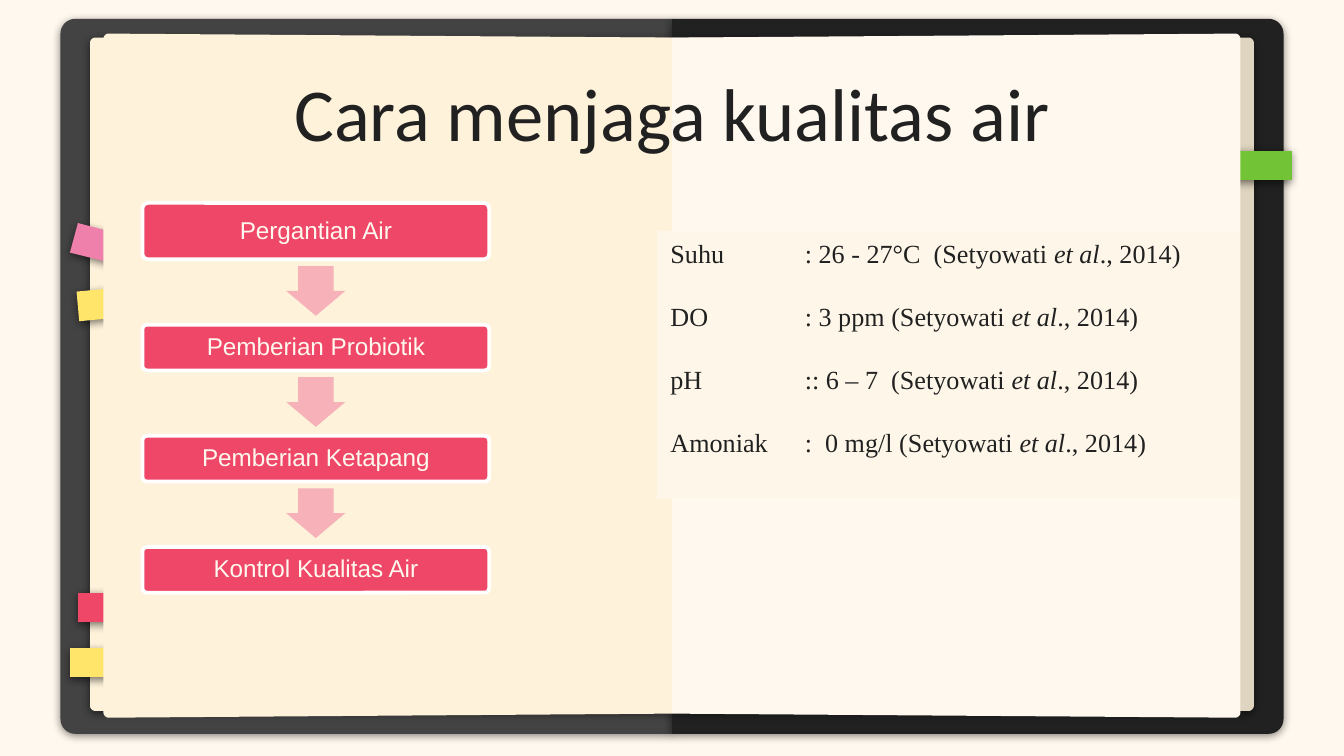
from math import cos, sin, pi
from lxml.etree import SubElement
from pptx import Presentation
from pptx.dml.color import RGBColor
from pptx.enum.shapes import MSO_SHAPE
from pptx.enum.text import MSO_ANCHOR, PP_ALIGN
from pptx.oxml.ns import qn
from pptx.util import Inches, Pt

WIDE = 10
HIGH = WIDE * 9 / 16
MID = WIDE / 2
HEX = {
    "cream": "FFF8EE", "sand": "FEF2DA", "edge": "DED4BF", "panel": "FEF7E9",
    "grey": "434343", "dark": "212121", "white": "FFFFFF", "red": "EF4768",
    "rose": "F6B1B9", "pink": "EF7FAB", "gold": "FFE56A", "green": "72C436",
}
COVER = dict(x=0.45, top=0.14, low=5.46, slant=0, r=0.11)
BLOCK = dict(x=0.67, top=0.28, low=5.29, slant=0, r=0.04)
SHEET = dict(x=0.77, top=0.25, low=5.34, slant=0.03, r=0.04)
STEPS = ["Pergantian Air", "Pemberian Probiotik", "Pemberian Ketapang", "Kontrol Kualitas Air"]
FACTS = [
    ("Suhu \t: 26 - 27°C  (Setyowati ", "., 2014)"),
    ("DO\t: 3 ppm (Setyowati ", "., 2014)"),
    ("pH\t:: 6 – 7  (Setyowati ", "., 2014)"),
    ("Amoniak\t:  0 mg/l (Setyowati ", "., 2014)"),
]
HEAD = dict(name="Calibri", size=Pt(40), bold=False)
STEP = dict(name="Arial", size=Pt(13))
FACT = dict(name="Times New Roman", size=Pt(14))


def color(key):
    return RGBColor.from_string(HEX[key])


def style(font, looks, key):
    for name, value in looks.items():
        setattr(font, name, value)
    font.color.rgb = color(key)


def frame(shape, anchor, pad):
    text = shape.text_frame
    looks = dict(word_wrap=True, vertical_anchor=anchor, margin_left=pad[0],
                 margin_right=pad[0], margin_top=pad[1], margin_bottom=pad[1])
    for name, value in looks.items():
        setattr(text, name, value)
    return text


def paint(shape, fill, line=None):
    shape.shadow.inherit = False
    shape.fill.solid()
    shape.fill.fore_color.rgb = color(fill)
    if line:
        shape.line.color.rgb = color(line)
        shape.line.width = Pt(2)
    else:
        shape.line.fill.background()


def shade(shape):
    props = shape.element.spPr
    glow = SubElement(props.find(qn("a:effectLst")), qn("a:outerShdw"),
                      blurRad=str(Pt(4.5)), dist=str(Pt(1.5)), dir="5400000",
                      algn="bl", rotWithShape="0")
    tint = SubElement(glow, qn("a:srgbClr"), val="000000")
    SubElement(tint, qn("a:alpha"), val="50000")


def outline(slide, points, fill, cast=True):
    spots = [(Inches(x), Inches(y)) for x, y in points]
    pen = slide.shapes.build_freeform(*spots[0], scale=1.0)
    pen.add_line_segments(spots[1:], close=True)
    shape = pen.convert_to_shape()
    paint(shape, fill)
    if cast:
        shade(shape)


def half(slide, fill, x, top, low, slant, r, right=False, cast=True):
    turns = [pi / 2 * i / 8 for i in range(9)]
    upper = [(x + r - r * sin(t), top + r - r * cos(t)) for t in turns]
    lower = [(px, top + low - py) for px, py in reversed(upper)]
    points = [(MID, top + slant), *upper, *lower, (MID, low - slant)]
    if right:
        points = [(WIDE - px, py) for px, py in points]
    outline(slide, points, fill, cast)


def tab(slide, x, y, fill):
    w, h = 0.74, 0.22
    outline(slide, [(x, y), (x, y + h), (x + w, y + h), (x + w, y)], fill)


def book(slide):
    half(slide, "grey", **COVER)
    half(slide, "sand", **BLOCK)
    half(slide, "dark", **COVER, right=True)
    outline(slide, [(1.31, 2.1), (0.57, 2.17), (0.59, 2.39), (1.33, 2.32)], "gold")
    half(slide, "edge", **BLOCK, right=True)
    outline(slide, [(0.58, 1.66), (0.52, 1.88), (1.24, 2.06), (1.3, 1.85)], "pink")
    for x, y, fill in [(0.58, 4.41, "red"), (0.52, 4.82, "gold"), (8.87, 1.12, "green")]:
        tab(slide, x, y, fill)
    half(slide, "sand", **SHEET, cast=False)
    half(slide, "cream", **SHEET, right=True, cast=False)


def place(slide, kind, x, y, w, h):
    return slide.shapes.add_shape(kind, Inches(x), Inches(y), Inches(w), Inches(h))


def title(slide, words):
    shape = slide.shapes.title
    shape.element.getparent().append(shape.element)
    spot = dict(left=0.78, top=0.4, width=8.44, height=0.78)
    for name, value in spot.items():
        setattr(shape, name, Inches(value))
    text = frame(shape, MSO_ANCHOR.TOP, (Inches(0.1), Inches(0.1)))
    text.text = words
    para = text.paragraphs[0]
    para.alignment = PP_ALIGN.CENTER
    style(para.font, HEAD, "dark")


def flow(slide, left, base, last):
    width = 2.58
    pitch = (last - base) / (len(STEPS) - 1)
    for i, words in enumerate(STEPS):
        high = 0.34 if i else 0.42
        low = base + i * pitch
        box = place(slide, MSO_SHAPE.ROUNDED_RECTANGLE, left, low - high, width, high)
        box.adjustments[0] = 0.1
        paint(box, "red", "white")
        text = frame(box, MSO_ANCHOR.MIDDLE, (Inches(0.05), Inches(0.05)))
        text.text = words
        para = text.paragraphs[0]
        para.alignment = PP_ALIGN.CENTER
        para.line_spacing = 0.9
        style(para.font, STEP, "cream")
        if i < len(STEPS) - 1:
            arrow = place(slide, MSO_SHAPE.DOWN_ARROW, left + width / 2 - 0.22, low + 0.05, 0.44, 0.37)
            arrow.adjustments[0], arrow.adjustments[1] = 0.6, 0.5
            paint(arrow, "rose")


def facts(slide):
    panel = place(slide, MSO_SHAPE.RECTANGLE, 4.89, 1.72, 4.33, 1.99)
    paint(panel, "panel")
    text = frame(panel, MSO_ANCHOR.TOP, (Inches(0.1), Inches(0.05)))
    for i, (start, end) in enumerate(FACTS):
        para = text.add_paragraph() if i else text.paragraphs[0]
        para.alignment = PP_ALIGN.LEFT
        if i:
            para.space_before = Pt(16.8)
        stops = SubElement(para._p.get_or_add_pPr(), qn("a:tabLst"))
        SubElement(stops, qn("a:tab"), pos=str(Inches(1)), algn="l")
        for words, slope in [(start, False), ("et al", True), (end, False)]:
            run = para.add_run()
            run.text = words
            style(run.font, dict(FACT, italic=slope), "dark")


def main():
    deck = Presentation()
    deck.slide_width, deck.slide_height = Inches(WIDE), Inches(HIGH)
    slide = deck.slides.add_slide(deck.slide_layouts[5])
    slide.background.fill.solid()
    slide.background.fill.fore_color.rgb = color("cream")
    book(slide)
    title(slide, "Cara menjaga kualitas air")
    flow(slide, 1.06, 1.93, 4.41)
    facts(slide)
    deck.save("out.pptx")


if __name__ == "__main__":
    main()
